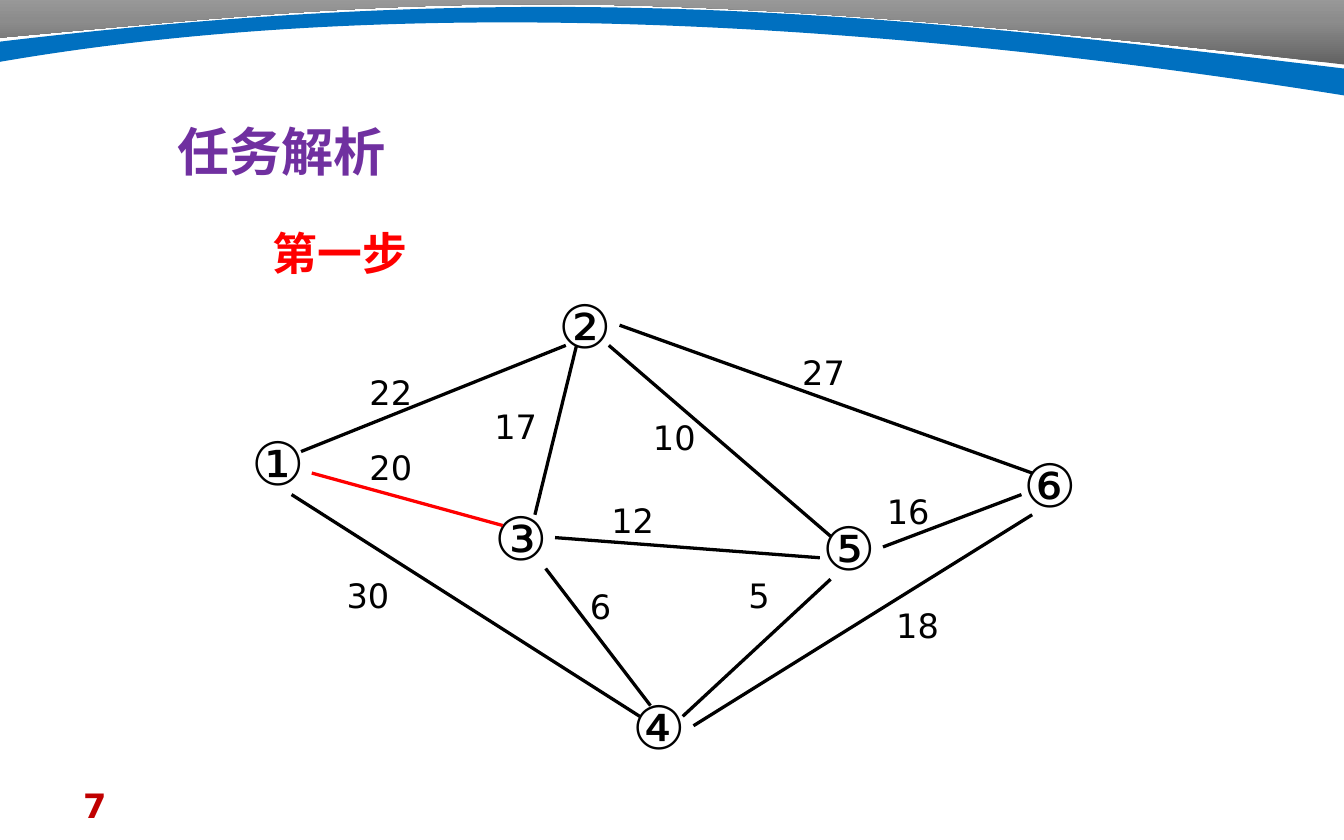
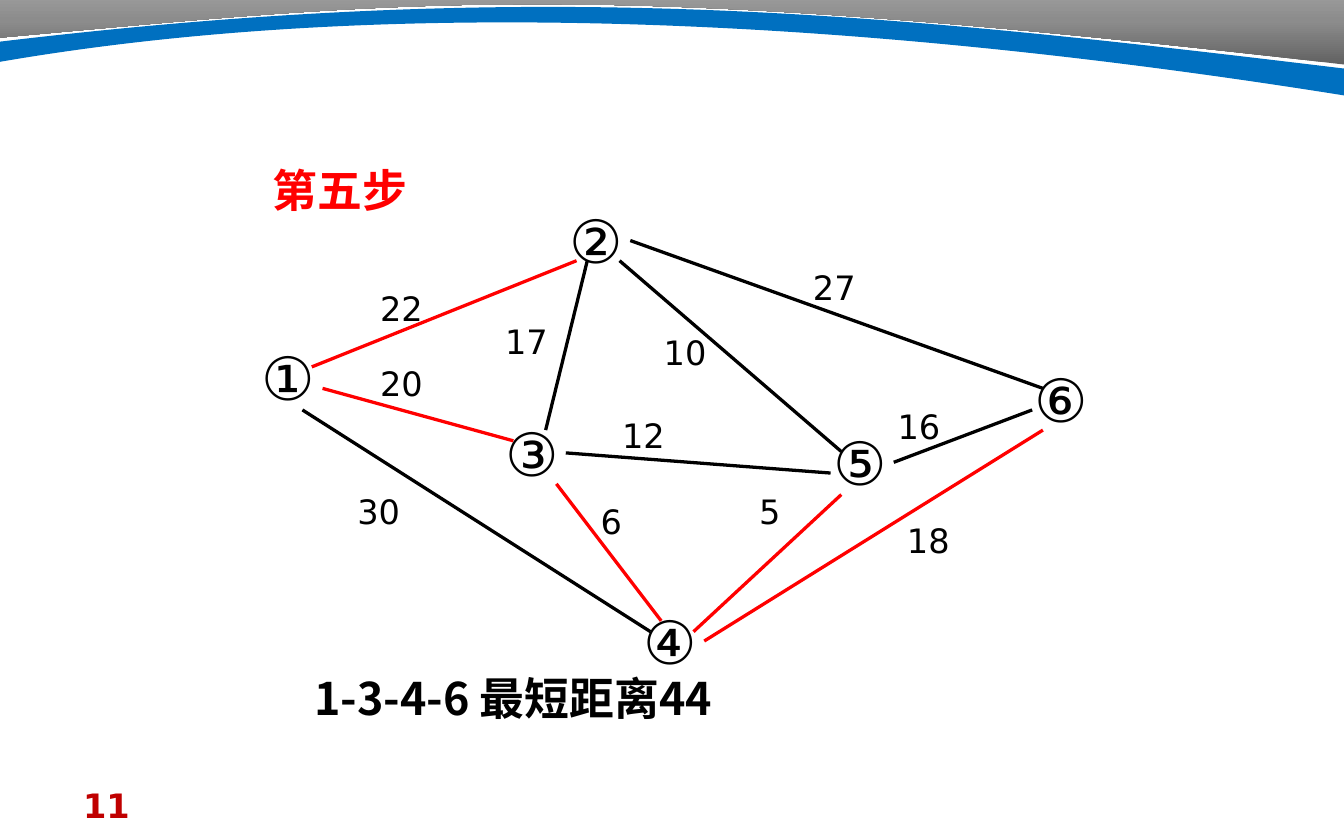
from copy import deepcopy

from lxml import etree
from pptx import Presentation
from pptx.dml.color import RGBColor
from pptx.enum.shapes import MSO_CONNECTOR
from pptx.enum.text import MSO_AUTO_SIZE
from pptx.oxml.ns import qn
from pptx.util import Inches, Pt

STRAIGHT = MSO_CONNECTOR.STRAIGHT
GROW = MSO_AUTO_SIZE.SHAPE_TO_FIT_TEXT
FIXED = MSO_AUTO_SIZE.NONE
LATIN = "DejaVu Sans"
HAN = "Noto Sans CJK SC"
COLORS = {
    "black": "000000",
    "red": "FF0000",
    "title": "7030A0",
    "number": "C00000",
    "blue": "0070C0",
    "white": "FFFFFF",
    "dark": "626262",
    "mid": "8C8C8C",
    "light": "A6A6A6",
}
RGB = {name: RGBColor.from_string(code) for name, code in COLORS.items()}

NODES = [
    ("①", 1.77, 3.12), ("②", 4.06, 2.1), ("⑥", 7.52, 3.28),
    ("③", 3.58, 3.68), ("⑤", 6.02, 3.75), ("④", 4.61, 5.08),
]
EDGES = [
    ("1-4", 2.17, 3.68, 4.76, 5.33),
    ("1-3", 2.32, 3.52, 3.74, 3.91),
    ("3-4", 4.06, 4.23, 4.84, 5.25),
    ("4-5", 6.18, 4.31, 5.08, 5.33),
    ("4-6", 7.68, 3.83, 5.16, 5.4),
    ("3-5", 4.13, 4, 6.1, 4.15),
    ("5-6", 6.57, 4.07, 7.6, 3.68),
    ("1-2", 4.21, 2.57, 2.24, 3.36),
    ("2-3", 4.29, 2.57, 3.98, 3.83),
    ("2-5", 4.53, 2.57, 6.18, 3.99),
    ("2-6", 4.61, 2.42, 7.68, 3.52),
]
COSTS = [
    ("30", 2.48, 4.23), ("18", 6.57, 4.45), ("6", 4.29, 4.31),
    ("5", 5.47, 4.23), ("20", 2.65, 3.28), ("12", 4.45, 3.67),
    ("16", 6.5, 3.6), ("22", 2.65, 2.72), ("17", 3.58, 2.97),
    ("10", 4.76, 3.05), ("27", 5.87, 2.57),
]
GRAY = [(10, 0.48), (4.43, -0.17), (3.08, 0), (0, 0.28),
        (0, 0.19), (0, -0.02), (10, -0.02)]
BLUE = [(0, 0.31), (4.03, -0.17), (6.52, 0.09), (10, 0.51),
        (10, 0.71), (6.05, 0.08), (2.67, 0), (0, 0.46)]
STEPS = [
    {
        "number": "7", "shift": (0, 0), "chosen": ["1-3"],
        "heads": [("任务解析", 1.22, 0.84, 0.57, 28, "title"),
                  ("第一步", 1.93, 1.63, 0.5, 24, "red")],
    },
    {
        "number": "11", "shift": (0.08, -0.63),
        "chosen": ["1-2", "1-3", "3-4", "4-5", "4-6"],
        "heads": [("第五步", 1.93, 1.16, 0.5, 24, "red"),
                  ("1-3-4-6 最短距离44", 2.24, 4.94, 0.5, 24, "black")],
    },
]


def add_text(shapes, text, place, size, color, face=LATIN, bold=False, fit=GROW):
    box = shapes.add_textbox(*[Inches(n) for n in place])
    frame = box.text_frame
    frame.word_wrap = True
    frame.auto_size = fit
    frame.text = text
    run = frame.paragraphs[0].runs[0]
    run.font.size = Pt(size)
    run.font.bold = bold
    run.font.color.rgb = RGB[color]
    run.font.name = face
    east = etree.SubElement(run.font._element, qn("a:ea"))
    east.set("typeface", face)


def add_band(shapes, points, curves):
    spots = [(Inches(x), Inches(y)) for x, y in points]
    pen = shapes.build_freeform(*spots[0])
    pen.add_line_segments(spots[1:], close=True)
    band = pen.convert_to_shape()
    band.shadow.inherit = False
    band.line.fill.background()
    lines = list(band._element.iter(qn("a:lnTo")))
    for start in curves:
        curve = etree.Element(qn("a:cubicBezTo"))
        lines[start].addprevious(curve)
        for line in lines[start:start + 3]:
            curve.append(line[0])
            line.getparent().remove(line)
    return band


deck = Presentation()
deck.slide_width = Inches(10)
deck.slide_height = Inches(6.25)

for step in STEPS:
    slide = deck.slides.add_slide(deck.slide_layouts[6])
    shapes = slide.shapes
    add_text(shapes, step["number"], (0.52, 5.79, 2.33, 0.33), 18, "number",
             bold=True, fit=FIXED)

    gray = add_band(shapes, GRAY, [0])
    gray.fill.gradient()
    gray.fill.gradient_angle = 90
    stops = next(gray._element.iter(qn("a:gsLst")))
    stops.append(deepcopy(stops[0]))
    shades = [(0, "dark"), (0.5, "mid"), (1, "light")]
    for stop, (spot, shade) in zip(gray.fill.gradient_stops, shades):
        stop.position = spot
        stop.color.rgb = RGB[shade]
    effects = next(gray._element.iter(qn("a:effectLst")))
    shadow = etree.SubElement(effects, qn("a:outerShdw"), blurRad="0",
                              dist=str(Pt(2)), dir="5400000", rotWithShape="0")
    etree.SubElement(shadow, qn("a:srgbClr"), val=COLORS["white"])

    blue = add_band(shapes, BLUE, [0, 4])
    blue.fill.solid()
    blue.fill.fore_color.rgb = RGB["blue"]

    for text, left, top, height, size, color in step["heads"]:
        add_text(shapes, text, (left, top, 3.7, height), size, color, HAN, True)

    graph = shapes.add_group_shape().shapes
    right, down = step["shift"]
    for text, left, top in NODES:
        add_text(graph, text, (left + right, top + down, 0.55, 0.64), 32, "black")
    for name, x1, y1, x2, y2 in EDGES:
        ends = (x1 + right, y1 + down, x2 + right, y2 + down)
        edge = graph.add_connector(STRAIGHT, *[Inches(n) for n in ends])
        edge.line.width = Pt(1.75)
        edge.line.color.rgb = RGB["red" if name in step["chosen"] else "black"]
        etree.SubElement(edge._element.spPr, qn("a:effectLst"))
    for text, left, top in COSTS:
        add_text(graph, text, (left + right, top + down, 0.79, 0.4), 18, "black")

deck.save("out.pptx")
